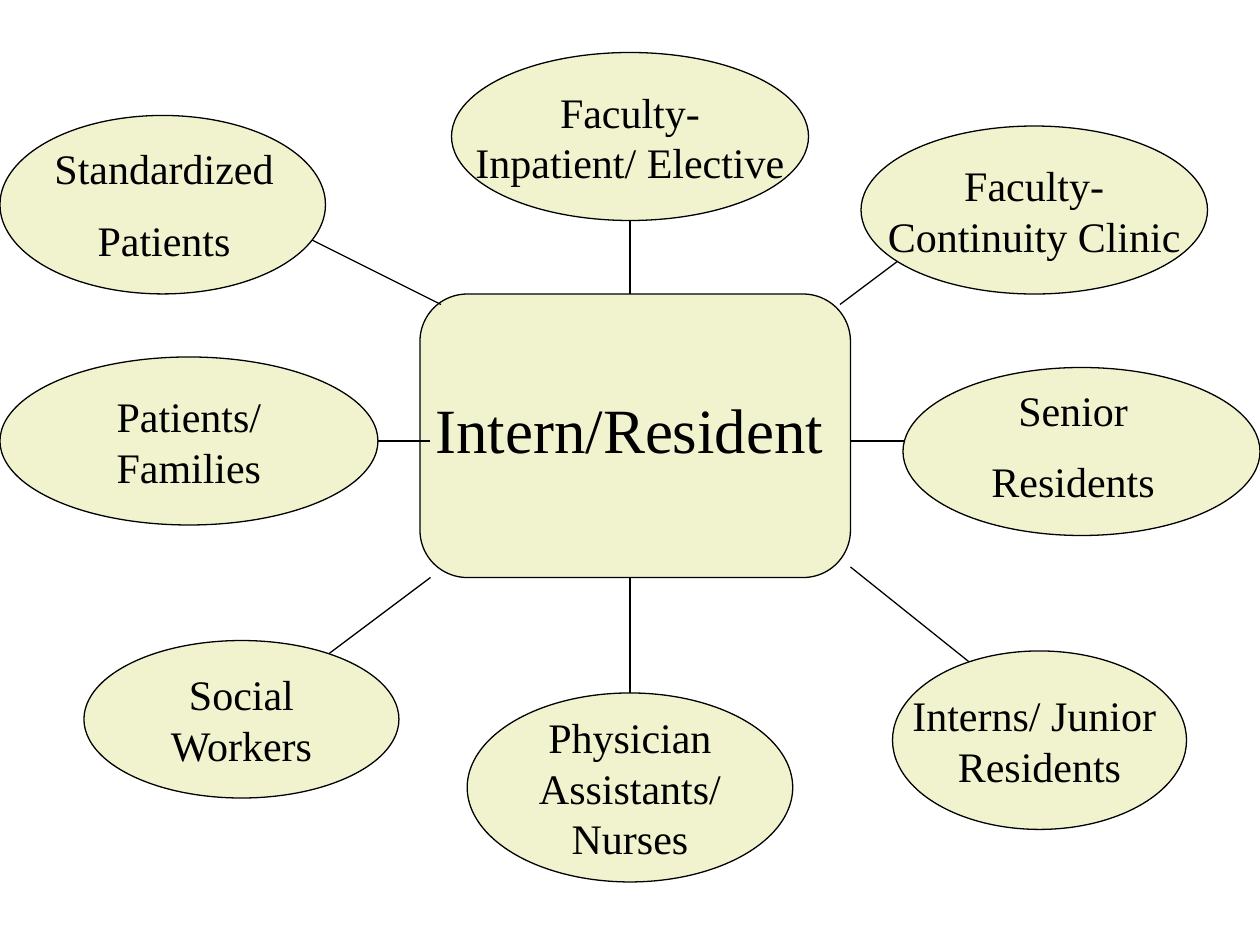
import dataclasses

import pptx
import pptx.dml.color
import pptx.enum.shapes
import pptx.enum.text
import pptx.oxml
import pptx.util

Pt = pptx.util.Pt
RGBColor = pptx.dml.color.RGBColor
Preset = pptx.enum.shapes.MSO_SHAPE


@dataclasses.dataclass(frozen=True)
class Theme:
    font: str = "Times New Roman"
    ink: RGBColor = RGBColor(0, 0, 0)
    fill: RGBColor = RGBColor(0xF1, 0xF3, 0xCF)
    label_size: int = 24
    hub_size: int = 36
    line_width: float = 0.75


class Diagram:
    """Holds the style and the current slide; all lengths are points."""

    def __init__(self, slide, theme):
        self.slide = slide
        self.theme = theme

    def add_lines(self, frame, lines, size, gap=0):
        for index, line in enumerate(lines):
            paragraph = frame.paragraphs[0] if index == 0 else frame.add_paragraph()
            paragraph.alignment = pptx.enum.text.PP_ALIGN.CENTER
            paragraph.space_before = Pt(gap if index else 0)
            run = paragraph.add_run()
            run.text = line
            run.font.name = self.theme.font
            run.font.size = Pt(size)
            run.font.color.rgb = self.theme.ink

    def node(self, preset, box, lines=()):
        shape = self.slide.shapes.add_shape(preset, *map(Pt, box))
        shape.shadow.inherit = False
        shape.fill.solid()
        shape.fill.fore_color.rgb = self.theme.fill
        shape.line.color.rgb = self.theme.ink
        shape.line.width = Pt(self.theme.line_width)
        if lines:
            shape.text_frame.word_wrap = False
            shape.text_frame.vertical_anchor = pptx.enum.text.MSO_ANCHOR.MIDDLE
            self.add_lines(shape.text_frame, lines, self.theme.label_size)

    def label(self, box, lines, size):
        frame = self.slide.shapes.add_textbox(*map(Pt, box)).text_frame
        frame.word_wrap = True
        frame.auto_size = pptx.enum.text.MSO_AUTO_SIZE.SHAPE_TO_FIT_TEXT
        self.add_lines(frame, lines, size, gap=size / 2)

    def spoke(self, ends):
        connector = self.slide.shapes.add_connector(
            pptx.enum.shapes.MSO_CONNECTOR.STRAIGHT, *map(Pt, ends))
        connector.line.color.rgb = self.theme.ink
        connector.line.width = Pt(self.theme.line_width)
        properties = connector.element.spPr
        properties.append(pptx.oxml.parse_xml(
            '<a:effectLst xmlns:a="http://schemas.openxmlformats.org/drawingml/2006/main"/>'))


# Spokes: from x, y to x, y
SPOKES = [
    (480, 174, 528, 138),
    (486, 252, 540, 252),
    (486, 324, 576, 396),
    (246, 330, 174, 384),
    (252, 174, 168, 132),
    (246, 252, 174, 252),
    (360, 330, 360, 414),
    (360, 126, 360, 168),
]

# Roles around the hub: left, top, width, height, and the text inside
ROLES = [
    ((492, 72, 198, 96), ["Faculty-", "Continuity Clinic"]),
    ((516, 210, 204, 96), []),
    ((510, 372, 168, 102), ["Interns/ Junior ", "Residents"]),
    ((48, 366, 180, 90), ["Social", "Workers"]),
    ((0, 204, 216, 96), ["Patients/", "Families"]),
    ((0, 66, 186, 102), []),
    ((267, 396, 186, 108), ["Physician", "Assistants/", "Nurses"]),
    ((258, 30, 204, 96), ["Faculty-", "Inpatient/ Elective"]),
]


def main():
    presentation = pptx.Presentation()
    presentation.slide_width = Pt(720)
    presentation.slide_height = Pt(540)
    slide = presentation.slides.add_slide(presentation.slide_layouts[6])
    theme = Theme()
    diagram = Diagram(slide, theme)

    # Hub, then spokes, then the roles that cover the spoke ends
    diagram.node(Preset.FLOWCHART_ALTERNATE_PROCESS, (240, 168, 246, 162))
    for ends in SPOKES:
        diagram.spoke(ends)
    for box, lines in ROLES:
        diagram.node(Preset.OVAL, box, lines)

    # Labels in their own text boxes
    diagram.label((235.5, 219.5, 248.5, 50.5), ["Intern/Resident"], theme.hub_size)
    diagram.label((24, 78, 139.5, 79), ["Standardized", "Patients"], theme.label_size)
    diagram.label((548.5, 216, 129.5, 79), ["Senior", "Residents"], theme.label_size)

    presentation.save("out.pptx")


if __name__ == "__main__":
    main()
